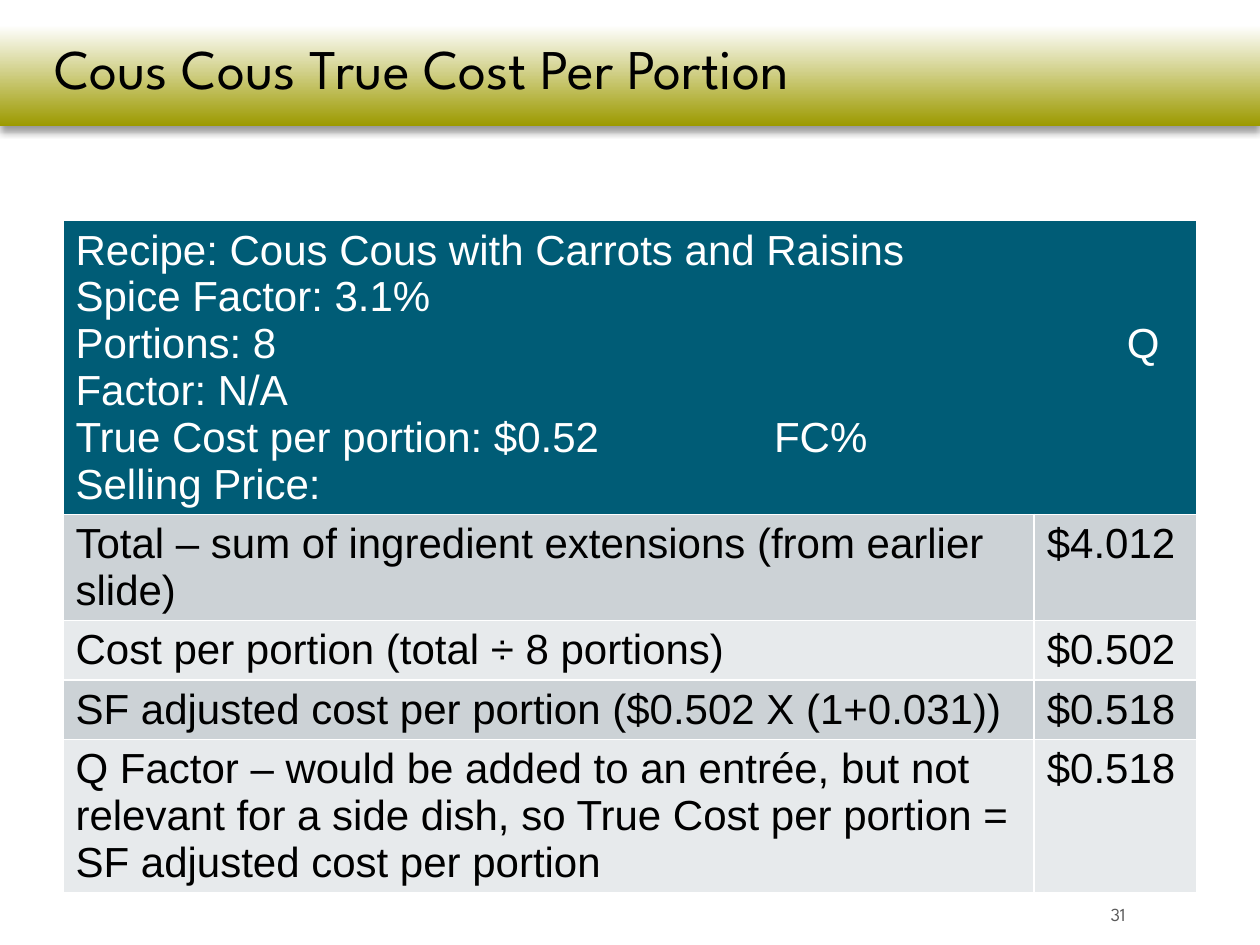
"""Build the slide on the true cost per portion of cous cous."""
from dataclasses import dataclass

import pptx
import pptx.dml.color
import pptx.enum.shapes
import pptx.enum.text
import pptx.oxml
import pptx.oxml.ns
import pptx.util

Cm = pptx.util.Cm
Pt = pptx.util.Pt
ANCHOR = pptx.enum.text.MSO_ANCHOR
ALIGN = pptx.enum.text.PP_ALIGN
NS = pptx.oxml.ns.nsdecls("a")


@dataclass(frozen=True)
class Theme:
    """Colours, fonts and type sizes."""
    white: str = "FFFFFF"
    black: str = "000000"
    olive: str = "9C9A00"
    teal: str = "005C76"
    bands: tuple = ("CCD2D6", "E7EAEC")
    grey: str = "595959"
    head: str = "League Spartan"
    body: str = "Arial"
    title: float = 32
    text: float = 24
    small: float = 10.5


@dataclass(frozen=True)
class Line:
    """A heading line with its tab stops in centimetres."""
    text: str
    stops: tuple = ()


@dataclass(frozen=True)
class Step:
    """A step of the costing and its amount."""
    label: str
    cost: str


THEME = Theme()
LINES = (
    Line("Recipe: Cous Cous with Carrots and Raisins"),
    Line("Spice Factor: 3.1%"),
    Line("Portions: 8\tQ Factor: N/A", (21.19,)),
    Line("True Cost per portion: $0.52\tFC%\tSelling Price:", (14.08, 21.19)),
)
STEPS = (
    Step("Total – sum of ingredient extensions (from earlier slide)", "$4.012"),
    Step("Cost per portion (total ÷ 8 portions)", "$0.502"),
    Step("SF adjusted cost per portion ($0.502 X (1+0.031))", "$0.518"),
    Step("Q Factor – would be added to an entrée, but not relevant for a side dish, "
         "so True Cost per portion = SF adjusted cost per portion", "$0.518"),
)


def rgb(code: str) -> pptx.dml.color.RGBColor:
    """Turn a hex code into a colour."""
    return pptx.dml.color.RGBColor.from_string(code)


def style(frame, face: str, size: float, tint: str) -> None:
    """Format every run in a text frame."""
    for para in frame.paragraphs:
        for run in para.runs:
            run.font.name = face
            run.font.size = Pt(size)
            run.font.color.rgb = rgb(tint)


def draw_band(slide) -> None:
    """Draw the shaded band behind the title."""
    band = slide.shapes.add_shape(
        pptx.enum.shapes.MSO_SHAPE.RECTANGLE, 0, 0, Cm(25.4), Cm(2.54))
    band.line.fill.background()
    band.fill.gradient()
    band.fill.gradient_angle = 270
    looks = ((0.2, THEME.white), (1, THEME.olive))
    for stop, (place, tint) in zip(band.fill.gradient_stops, looks):
        stop.position = place
        stop.color.rgb = rgb(tint)
    band.shadow.inherit = False
    glow = pptx.oxml.parse_xml(
        f'<a:outerShdw {NS} blurRad="{Pt(4)}" dist="{Pt(3)}" dir="5400000" rotWithShape="0">'
        f'<a:srgbClr val="{THEME.black}"><a:alpha val="40000"/></a:srgbClr></a:outerShdw>')
    band.element.spPr.find(pptx.oxml.ns.qn("a:effectLst")).append(glow)
    slide.shapes.element.insert(2, band.element)


def draw_title(slide, text: str) -> None:
    """Place and format the title."""
    title = slide.shapes.title
    title.left, title.top, title.width, title.height = Cm(0.84), 0, Cm(23.7), Cm(2.54)
    frame = title.text_frame
    frame.text = text
    frame.auto_size = pptx.enum.text.MSO_AUTO_SIZE.NONE
    frame.vertical_anchor = ANCHOR.MIDDLE
    frame.margin_top = Cm(0.56)
    frame.paragraphs[0].alignment = ALIGN.LEFT
    frame.paragraphs[0].line_spacing = 0.8
    style(frame, THEME.head, THEME.title, THEME.black)


def edge(cell) -> None:
    """Give a cell thin white borders."""
    for spot, side in enumerate("LRTB"):
        cell._tc.get_or_add_tcPr().insert(spot, pptx.oxml.parse_xml(
            f'<a:ln{side} {NS} w="{Pt(1)}"><a:solidFill>'
            f'<a:srgbClr val="{THEME.white}"/></a:solidFill></a:ln{side}>'))


def paint(cell, fill: str, tint: str) -> None:
    """Format the text, fill and borders of a cell."""
    style(cell.text_frame, THEME.body, THEME.text, tint)
    cell.fill.solid()
    cell.fill.fore_color.rgb = rgb(fill)
    edge(cell)


def set_tabs(para, stops: tuple) -> None:
    """Add left tab stops to a paragraph."""
    if stops:
        tabs = "".join(f'<a:tab pos="{Cm(stop)}" algn="l"/>' for stop in stops)
        para._p.get_or_add_pPr().append(
            pptx.oxml.parse_xml(f"<a:tabLst {NS}>{tabs}</a:tabLst>"))


def draw_table(slide, lines: tuple, steps: tuple) -> None:
    """Draw the recipe heading and the costing steps."""
    rows = len(steps) + 1
    shape = slide.shapes.add_table(
        rows, 2, Cm(1.27), Cm(4.45), Cm(22.86), Cm(1.04 * rows))
    table = shape.table
    for col, width in zip(table.columns, (19.58, 3.28)):
        col.width = Cm(width)
    top = table.cell(0, 0)
    top.merge(table.cell(0, 1))
    top.text_frame.text = "\n".join(line.text for line in lines)
    for para, line in zip(top.text_frame.paragraphs, lines):
        set_tabs(para, line.stops)
    paint(top, THEME.teal, THEME.white)
    edge(table.cell(0, 1))
    for row, step in enumerate(steps, 1):
        for col, text in enumerate((step.label, step.cost)):
            cell = table.cell(row, col)
            cell.text_frame.text = text
            paint(cell, THEME.bands[(row - 1) % 2], THEME.black)
    shape.height = Cm(8.94)


def draw_page(slide, text: str) -> None:
    """Write the page number."""
    frame = slide.shapes.add_textbox(Cm(19.94), Cm(17.75), Cm(3), Cm(1.02)).text_frame
    frame.word_wrap = True
    frame.vertical_anchor = ANCHOR.BOTTOM
    frame.text = text
    frame.paragraphs[0].alignment = ALIGN.RIGHT
    style(frame, THEME.head, THEME.small, THEME.grey)


def main() -> None:
    """Build and save the slide."""
    deck = pptx.Presentation()
    deck.slide_width, deck.slide_height = Cm(25.4), Cm(19.05)
    slide = deck.slides.add_slide(deck.slide_layouts[5])
    draw_band(slide)
    draw_title(slide, "Cous Cous True Cost Per Portion")
    draw_table(slide, LINES, STEPS)
    draw_page(slide, "31")
    deck.save("out.pptx")


if __name__ == "__main__":
    main()
